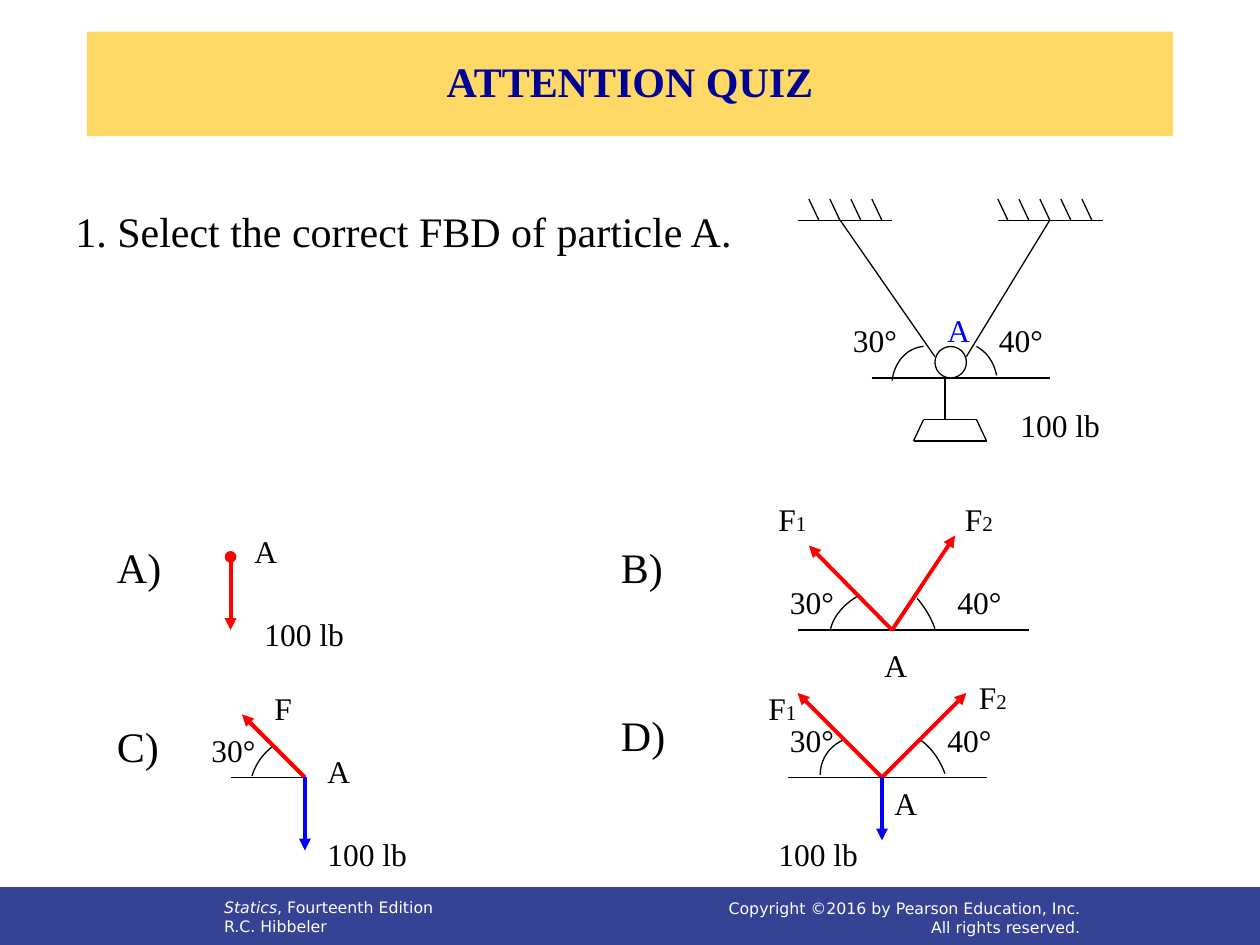
"""Build the attention quiz slide on free-body diagrams of particle A."""
import itertools

import pptx
import pptx.util
import pptx.dml.color
import pptx.enum.shapes
import pptx.enum.text
import pptx.oxml.ns
from lxml import etree

Inches, Pt = pptx.util.Inches, pptx.util.Pt
ALIGN = pptx.enum.text.PP_ALIGN
MIDDLE = pptx.enum.text.MSO_ANCHOR.MIDDLE
SHAPES = pptx.enum.shapes.MSO_SHAPE
SERIF, SANS = "Times New Roman", "DejaVu Sans"
COLORS = {
    "black": "000000", "white": "FFFFFF", "red": "FF0000", "blue": "0000FF",
    "particle": "0000FA", "title": "000096", "banner": "FFD966", "footer": "364395",
}

TITLE = "ATTENTION QUIZ"
HEADINGS = [
    ("1. Select the correct FBD of particle A.", 0.5, 1.58, 5.67),
    ("A)", 0.83, 4.25, 0.83),
    ("B)", 4.83, 4.25, 0.75),
    ("C)", 0.83, 5.67, 0.58),
    ("D)", 4.83, 5.58, 0.75),
]
LABELS = [
    ("30°", 6.67, 2.5, 0.67), ("40°", 7.83, 2.5, 0.67), ("100 lb", 8, 3.17, 1.08),
    ("A", 1.92, 4.17, 0.58), ("100 lb", 2, 4.83, 0.9),
    ("F|1\t|F|2", 6.08, 3.92, 2.08), ("30°", 6.17, 4.58, 0.67),
    ("40°", 7.5, 4.58, 0.92), ("A", 6.92, 5.08, 0.58),
    ("F", 2.08, 5.42, 0.58), ("30°", 1.58, 5.75, 0.67),
    ("A", 2.5, 5.92, 0.58), ("100 lb", 2.5, 6.58, 1.42),
    ("F|1", 6, 5.42, 0.58), ("F|2", 7.67, 5.33, 0.58), ("30°", 6.17, 5.67, 0.67),
    ("40°", 7.42, 5.67, 0.6), ("A", 7, 6.17, 0.5), ("100 lb", 6.08, 6.58, 1),
]
FORCE_TAB = 1.48
LEVELS = [
    (6.33, 7.08, 1.75), (7.92, 8.75, 1.75), (6.92, 8.33, 3),
    (6.33, 8.17, 5), (1.83, 2.42, 6.17), (6.25, 7.83, 6.17),
]
CABLES = [((6.67, 1.75), (7.42, 2.83)), ((8.33, 1.75), (7.67, 2.83)), ((7.5, 3), (7.5, 3.33))]
WEIGHT = [(7.33, 3.33), (7.75, 3.33), (7.83, 3.5), (7.25, 3.5), (7.33, 3.33)]
HATCHES = [(6.42, 4), (7.92, 5)]
HATCH_GAP, HATCH_TOP, HATCH_BASE, HATCH_LEAN = 1 / 6, 1.58, 1.75, 0.08
FORCES = [
    ((1.83, 4.42), (1.83, 5), "red", "oval"),
    ((7.08, 5), (6.42, 4.33), "red", None),
    ((7.08, 5), (7.58, 4.25), "red", None),
    ((2.42, 6.17), (1.92, 5.67), "red", None),
    ((2.42, 6.17), (2.42, 6.75), "blue", None),
    ((7, 6.17), (6.33, 5.5), "red", None),
    ((7, 6.17), (7.67, 5.5), "red", None),
    ((7, 6.17), (7, 6.67), "blue", None),
]
ANGLES = [
    [(7.75, 2.75), (7.84, 2.8), (7.89, 2.88), (7.91, 2.98)],
    [(7.33, 2.75), (7.2, 2.76), (7.1, 2.87), (7.08, 3.02)],
    [(6.59, 5), (6.61, 4.9), (6.69, 4.8), (6.81, 4.73)],
    [(7.28, 4.75), (7.34, 4.82), (7.39, 4.9), (7.42, 4.99)],
    [(2, 6.16), (2.03, 6.06), (2.09, 5.98), (2.17, 5.92)],
    [(7.3, 5.87), (7.39, 5.93), (7.46, 6.03), (7.5, 6.14)],
    [(6.51, 6.15), (6.51, 6.03), (6.58, 5.92), (6.7, 5.87)],
]
ARC_STEPS = 16
BOOK = [[("Statics", True), (", Fourteenth Edition", False)], [("R.C. Hibbeler", False)]]
RIGHTS = [[("Copyright ©2016 by Pearson Education, Inc.", False)], [("All rights reserved.", False)]]


def rgb(color):
    return pptx.dml.color.RGBColor.from_string(COLORS[color])


def apply(target, **values):
    for key, value in values.items():
        setattr(target, key, value)


def add_run(paragraph, text, color, **style):
    run = paragraph.add_run()
    run.text = text
    apply(run.font, **style)
    run.font.color.rgb = rgb(color)


def add_box(slide, left, top, width, height):
    frame = slide.shapes.add_textbox(*map(Inches, (left, top, width, height))).text_frame
    frame.word_wrap = True
    return frame


def add_label(slide, text, left, top, width, size=18, color="black"):
    paragraph = add_box(slide, left, top, width, 0.5 if size == 24 else 0.4).paragraphs[0]
    if "\t" in text:
        tabs = etree.SubElement(paragraph._p.get_or_add_pPr(), pptx.oxml.ns.qn("a:tabLst"))
        etree.SubElement(tabs, pptx.oxml.ns.qn("a:tab"), pos=str(Inches(FORCE_TAB)), algn="l")
    for part, part_size in zip(text.split("|"), itertools.cycle((size, 12))):
        add_run(paragraph, part, color, name=SERIF, size=Pt(part_size))


def add_line(slide, start, end, color="black", width=0.75, **ends):
    line = slide.shapes.add_connector(
        pptx.enum.shapes.MSO_CONNECTOR.STRAIGHT, *map(Inches, (*start, *end)))
    line.line.color.rgb = rgb(color)
    line.line.width = Pt(width)
    for tag, kind in ends.items():
        if kind:
            etree.SubElement(line.line._get_or_add_ln(), pptx.oxml.ns.qn("a:" + tag), type=kind)
    etree.SubElement(line._element.spPr, pptx.oxml.ns.qn("a:effectLst"))


def add_shape(slide, kind, box, fill, outline, width):
    shape = slide.shapes.add_shape(kind, *map(Inches, box))
    shape.shadow.inherit = False
    shape.fill.solid()
    shape.fill.fore_color.rgb = rgb(fill)
    shape.line.color.rgb = rgb(outline)
    shape.line.width = Pt(width)


def add_angle(slide, controls):
    points = []
    for step in range(ARC_STEPS + 1):
        t = step / ARC_STEPS
        weights = ((1 - t) ** 3, 3 * t * (1 - t) ** 2, 3 * t * t * (1 - t), t ** 3)
        points.append(tuple(Inches(sum(w * v for w, v in zip(weights, axis)))
                            for axis in zip(*controls)))
    builder = slide.shapes.build_freeform(*points[0])
    builder.add_line_segments(points[1:], close=False)
    arc = builder.convert_to_shape()
    arc.shadow.inherit = False
    arc.fill.background()
    arc.line.color.rgb = rgb("black")
    arc.line.width = Pt(0.75)


def add_footer(slide, lines, box, **layout):
    frame = add_box(slide, *box)
    frame.vertical_anchor = layout.get("anchor")
    for number, parts in enumerate(lines):
        paragraph = frame.add_paragraph() if number else frame.paragraphs[0]
        paragraph.alignment = layout.get("align")
        for text, italic in parts:
            add_run(paragraph, text, "white", name=SANS, size=Pt(9), italic=italic)


def add_title(slide):
    title = slide.shapes.title
    apply(title, left=Inches(0.69), top=Inches(0.25), width=Inches(8.62), height=Inches(0.83))
    title.fill.solid()
    title.fill.fore_color.rgb = rgb("banner")
    title.text_frame.vertical_anchor = MIDDLE
    paragraph = title.text_frame.paragraphs[0]
    apply(paragraph, alignment=ALIGN.CENTER, line_spacing=0.9)
    add_run(paragraph, TITLE, "title", name=SERIF, size=Pt(24), bold=True)


def main():
    deck = pptx.Presentation()
    apply(deck, slide_width=Inches(10), slide_height=Inches(7.5))
    slide = deck.slides.add_slide(deck.slide_layouts[5])
    add_title(slide)
    add_shape(slide, SHAPES.RECTANGLE, (-0.01, 7.04, 10.02, 0.47), "footer", "footer", 0.5)
    add_footer(slide, BOOK, (1.68, 7.08, 6.16, 0.4))
    add_footer(slide, RIGHTS, (4.67, 7.07, 4, 0.43), align=ALIGN.RIGHT, anchor=MIDDLE)

    for left, right, y in LEVELS:
        add_line(slide, (left, y), (right, y))
    for start, end in CABLES + list(zip(WEIGHT, WEIGHT[1:])):
        add_line(slide, start, end)
    for first, count in HATCHES:
        for index in range(count):
            x = first + index * HATCH_GAP
            add_line(slide, (x, HATCH_TOP), (x + HATCH_LEAN, HATCH_BASE))
    add_shape(slide, SHAPES.OVAL, (7.42, 2.75, 0.25, 0.25), "white", "black", 0.75)
    for controls in ANGLES:
        add_angle(slide, controls)
    for start, end, color, head in FORCES:
        add_line(slide, start, end, color, 2.25, headEnd=head, tailEnd="triangle")

    for heading in HEADINGS:
        add_label(slide, *heading, size=24)
    for label in LABELS:
        add_label(slide, *label)
    add_label(slide, "A", 7.42, 2.42, 0.33, color="particle")
    deck.save("out.pptx")


if __name__ == "__main__":
    main()
